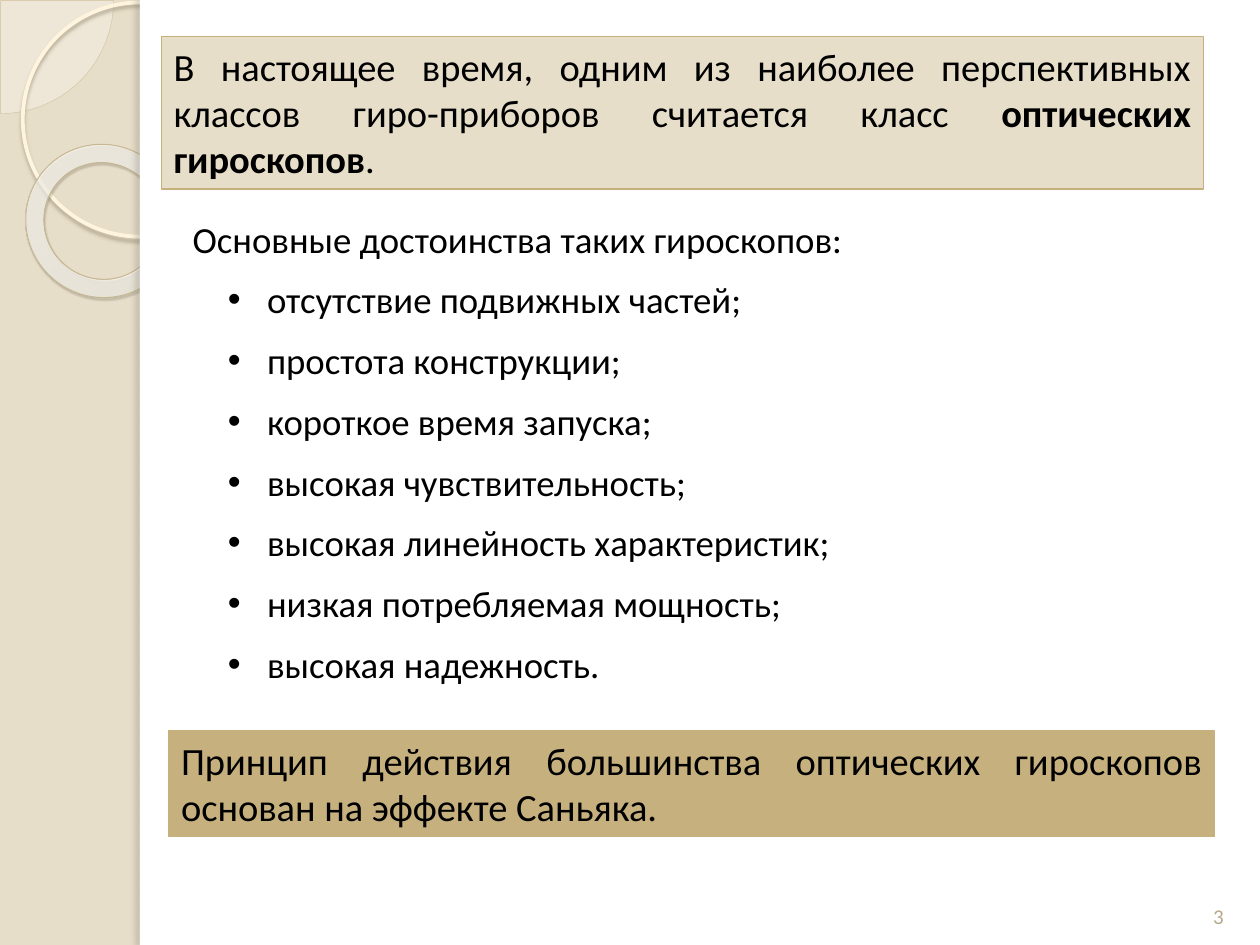
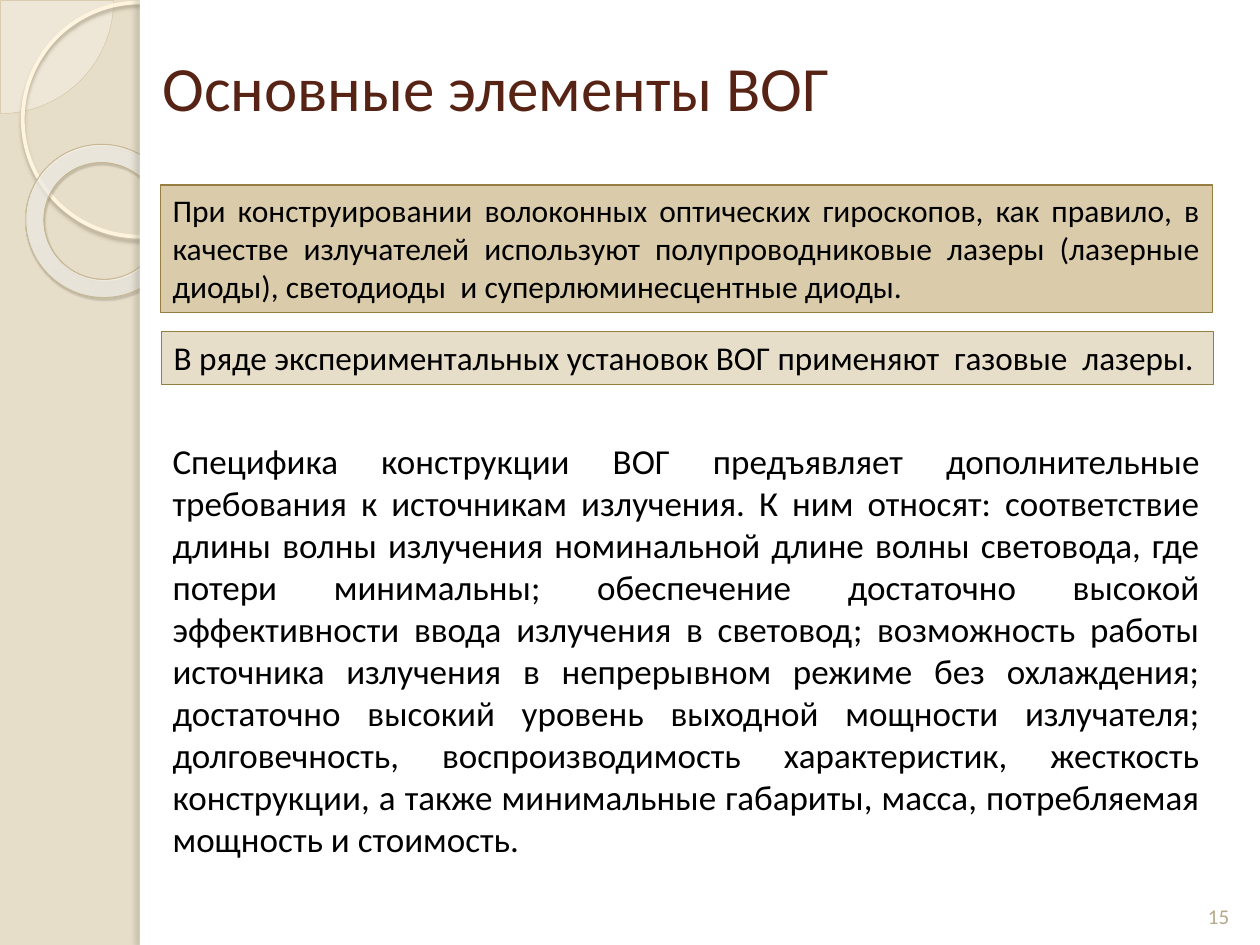
from dataclasses import dataclass
from typing import NamedTuple

from lxml.etree import SubElement
from pptx import Presentation
from pptx.dml.color import RGBColor as Rgb
from pptx.enum.shapes import MSO_SHAPE as Kind
from pptx.enum.text import MSO_ANCHOR as Anchor, MSO_AUTO_SIZE as Fit, PP_ALIGN as Align
from pptx.oxml.ns import qn
from pptx.util import Cm, Pt

FONT = "Calibri"
HUES = {
    "sand": "E7DEC9", "tan": "DACCAB", "gold": "C6B07E", "edge": "967D42",
    "white": "FFFFFF", "black": "000000", "brown": "572314", "page": "B6A98A",
    "pie": "FEFAF4", "rim": "D3C39F", "ring": "FFF5DE", "hoop": "C7B893",
    "shade": "B0A68F", "dusk": "5A5444", "gray": "736F63",
}


class Box(NamedTuple):
    """Place and size in centimetres."""
    left: float
    top: float
    width: float
    height: float


class Run(NamedTuple):
    text: str
    bold: bool = False


class Shade(NamedTuple):
    hue: str
    alpha: int
    blur: float
    dist: float
    angle: int


class Stop(NamedTuple):
    pos: int
    hex: str
    alpha: int


@dataclass
class Part:
    """A piece of the side decoration."""
    kind: Kind
    box: Box
    fill: str | None = None
    alpha: int = 100
    line: str | None = None
    width: float = 0
    adj: tuple[float, ...] = ()
    turn: float = 0
    shade: Shade | None = None
    stops: tuple[Stop, ...] = ()


@dataclass
class Note:
    """A justified text block, framed when it has a fill."""
    box: Box
    size: int
    runs: list[Run]
    fill: str | None = None
    line: str | None = None


SIDE = [
    Part(Kind.PIE, Box(-2.26, -2.26, 4.55, 4.55), "pie", 33, "rim", 0.25, (0, 54.02)),
    Part(Kind.OVAL, Box(0.46, 0.05, 4.72, 4.72), line="ring", width=2.15,
         shade=Shade("shade", 85, 2, 2, 90)),
    Part(Kind.DONUT, Box(0.51, 2.92, 3.12, 3.07), line="hoop", width=0.58,
         adj=(0.12,), turn=38.6, shade=Shade("dusk", 35, 1, 1.2, 75),
         stops=(Stop(0, "FFFCF6", 70), Stop(70, "FFFEFB", 55), Stop(100, "F0D28E", 60))),
    Part(Kind.RECTANGLE, Box(2.82, 0, 22.58, 19.05), "white"),
    Part(Kind.RECTANGLE, Box(2.82, 0, 0.2, 19.05), "white",
         shade=Shade("gray", 25, 3, 3, 180)),
]

PAGE = Box(23.93, 17.53, 1.27, 1.32)
LIST = Box(3.63, 4.11, 20.7, 9.88)
HEAD = Box(3.02, 0.15, 21.89, 3.18)

GYROS = [
    Note(Box(3.25, 0.74, 21.01, 3.07), 22, [
        Run("В настоящее время, одним из наиболее перспективных классов "
            "гиро-приборов считается класс "),
        Run("оптических гироскопов", True), Run(".")], "sand", "gold"),
    Note(Box(3.4, 14.73, 21.08, 2.13), 22, [
        Run("Принцип действия большинства оптических гироскопов основан "
            "на эффекте Саньяка.")], "gold", "gold"),
]
LEAD = "Основные достоинства таких гироскопов:"
MERITS = [
    "отсутствие подвижных частей;",
    "простота конструкции;",
    "короткое время запуска;",
    "высокая чувствительность;",
    "высокая линейность характеристик;",
    "низкая потребляемая мощность;",
    "высокая надежность.",
]

LASERS = [
    Note(Box(3.23, 3.73, 21.21, 2.57), 18, [
        Run("При конструировании волоконных оптических гироскопов, как правило, "
            "в качестве излучателей используют полупроводниковые лазеры (лазерные "
            "диоды), светодиоды  и суперлюминесцентные диоды.")], "tan", "edge"),
    Note(Box(3.23, 8.74, 21.21, 8.81), 20, [
        Run("Специфика конструкции ВОГ предъявляет дополнительные требования к "
            "источникам излучения. К ним относят: соответствие длины волны излучения "
            "номинальной длине волны световода, где потери минимальны; обеспечение "
            "достаточно высокой эффективности ввода излучения в световод; возможность "
            "работы источника излучения в непрерывном режиме без охлаждения; достаточно "
            "высокий уровень выходной мощности излучателя; долговечность, "
            "воспроизводимость характеристик, жесткость конструкции, а также "
            "минимальные габариты, масса, потребляемая мощность и стоимость.")]),
    Note(Box(3.25, 6.68, 21.21, 1.07), 19, [
        Run("В ряде экспериментальных установок ВОГ применяют  газовые  лазеры.")],
         "sand", "edge"),
]


def tint(name: str) -> Rgb:
    return Rgb.from_string(HUES[name])


def cms(box: Box) -> list[Cm]:
    return [Cm(side) for side in box]


def move(shape, box: Box) -> None:
    shape.left, shape.top, shape.width, shape.height = cms(box)


def node(parent, tag: str, **attrs):
    return SubElement(parent, qn(tag), {key: str(val) for key, val in attrs.items()})


def clear(parent, hue: str, alpha: int) -> None:
    """Add a partly transparent colour."""
    node(node(parent, "a:srgbClr", val=hue), "a:alpha", val=alpha * 1000)


def paint(shape, fill: str | None, line: str | None, width: float) -> None:
    shape.shadow.inherit = False
    if fill:
        shape.fill.solid()
        shape.fill.fore_color.rgb = tint(fill)
    else:
        shape.fill.background()
    if line:
        shape.line.color.rgb = tint(line)
        shape.line.width = Pt(width)
    else:
        shape.line.fill.background()


def blend(shape, stops: tuple[Stop, ...]) -> None:
    """Swap the empty fill for a radial gradient."""
    props = shape.element.spPr
    old = props.find(qn("a:noFill"))
    grad = node(props, "a:gradFill", rotWithShape=1)
    steps = node(grad, "a:gsLst")
    for stop in stops:
        clear(node(steps, "a:gs", pos=stop.pos * 1000), stop.hex, stop.alpha)
    path = node(grad, "a:path", path="circle")
    node(path, "a:fillToRect", l=-408000, t=-50000, r=508000, b=150000)
    props.replace(old, grad)


def cast(shape, shade: Shade) -> None:
    list_ = shape.element.spPr.find(qn("a:effectLst"))
    outer = node(list_, "a:outerShdw", blurRad=Pt(shade.blur), dist=Pt(shade.dist),
                 dir=shade.angle * 60000, algn="tl", rotWithShape=0)
    clear(outer, HUES[shade.hue], shade.alpha)


def draw(slide, part: Part):
    shape = slide.shapes.add_shape(part.kind, *cms(part.box))
    paint(shape, part.fill, part.line, part.width)
    shape.rotation = part.turn
    for index, value in enumerate(part.adj):
        shape.adjustments[index] = value
    if part.alpha < 100:
        color = shape.element.spPr.find(qn("a:solidFill")).find(qn("a:srgbClr"))
        node(color, "a:alpha", val=part.alpha * 1000)
    if part.stops:
        blend(shape, part.stops)
    if part.shade:
        cast(shape, part.shade)
    return shape


def dress(prs, slide) -> None:
    """Put the side decoration on the master, behind its placeholders."""
    master = prs.slide_master
    master.background.fill.solid()
    master.background.fill.fore_color.rgb = tint("sand")
    for index, part in enumerate(SIDE):
        item = draw(slide, part).element
        item.nvSpPr.cNvPr.set("id", str(100 + index))
        master.shapes.element.insert(2 + index, item)


def write(para, runs: list[Run], size: int, hue: str = "black",
          align: Align = Align.JUSTIFY) -> None:
    para.alignment = align
    for piece in runs:
        run = para.add_run()
        run.text = piece.text
        font = run.font
        font.name, font.size, font.bold = FONT, Pt(size), piece.bold
        font.color.rgb = tint(hue)


def frame(shape, anchor: Anchor, fit: Fit = Fit.NONE):
    text = shape.text_frame
    text.word_wrap = True
    text.vertical_anchor = anchor
    text.auto_size = fit
    return text


def put(slide, note: Note) -> None:
    if note.fill:
        shape = slide.shapes.add_shape(Kind.RECTANGLE, *cms(note.box))
        paint(shape, note.fill, note.line, 0.75)
    else:
        shape = slide.shapes.add_textbox(*cms(note.box))
    text = frame(shape, Anchor.TOP, Fit.SHAPE_TO_FIT_TEXT)
    write(text.paragraphs[0], note.runs, note.size)


def count(slide, page: int) -> None:
    text = frame(slide.shapes.add_textbox(*cms(PAGE)), Anchor.BOTTOM)
    write(text.paragraphs[0], [Run(str(page))], 12, "page", Align.CENTER)


def fill_list(body) -> None:
    move(body, LIST)
    text = frame(body, Anchor.TOP)
    for index, line in enumerate([LEAD, *MERITS]):
        para = text.add_paragraph() if index else text.paragraphs[0]
        para.line_spacing = 1.14
        para.space_before, para.space_after = Pt(0), Pt(6)
        props = para._p.get_or_add_pPr()
        props.set("marL", str(Cm(1.5) if index else 0))
        props.set("indent", str(Cm(-0.79) if index else 0))
        if index:
            node(props, "a:buFont", typeface="Arial")
            node(props, "a:buChar", char="•")
        else:
            node(props, "a:buNone")
        write(para, [Run(line)], 21)


def main() -> None:
    prs = Presentation()
    prs.slide_width, prs.slide_height = Cm(25.4), Cm(19.05)

    # Merits of optical gyroscopes
    slide = prs.slides.add_slide(prs.slide_layouts[1])
    dress(prs, slide)
    title = slide.shapes.title.element
    title.getparent().remove(title)
    count(slide, 3)
    for note in GYROS:
        put(slide, note)
    fill_list(slide.placeholders[1])

    # Light sources of the fibre gyroscope
    slide = prs.slides.add_slide(prs.slide_layouts[5])
    count(slide, 15)
    move(slide.shapes.title, HEAD)
    text = frame(slide.shapes.title, Anchor.MIDDLE)
    write(text.paragraphs[0], [Run("Основные элементы ВОГ")], 36, "brown", Align.LEFT)
    for note in LASERS:
        put(slide, note)

    prs.save("out.pptx")


if __name__ == "__main__":
    main()
